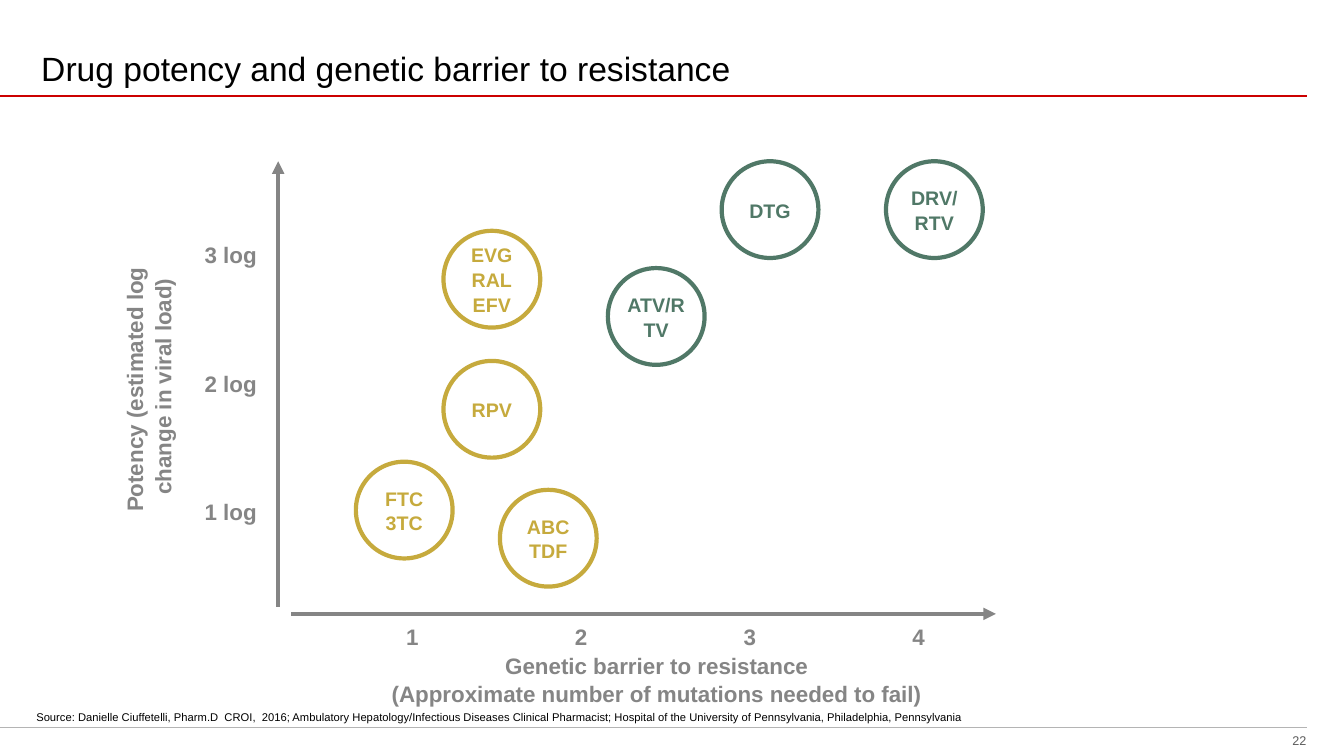
from lxml import etree
from pptx import Presentation
from pptx import util as u
from pptx.dml.color import RGBColor
from pptx.enum import shapes, text
from pptx.oxml.ns import qn

COLORS = {
    "white": "FFFFFF", "black": "000000", "gray": "858585",
    "number": "5C5C5C", "rule": "B4B4B4", "red": "CC0000",
    "gold": "C6AA3D", "green": "507867",
}
LEFT, CENTER, RIGHT = text.PP_ALIGN.LEFT, text.PP_ALIGN.CENTER, text.PP_ALIGN.RIGHT
TOP, MIDDLE, BOTTOM = text.MSO_ANCHOR.TOP, text.MSO_ANCHOR.MIDDLE, text.MSO_ANCHOR.BOTTOM
DRUG_SIZE = 69.1
DRUGS = [
    ("FTC\n3TC", "gold", 254.2, 329.8),
    ("ABC\nTDF", "gold", 357.1, 349.9),
    ("RPV", "gold", 316.8, 257.8),
    ("EVG\nRAL\nEFV", "gold", 316.8, 164.9),
    ("ATV/R\nTV", "green", 434.2, 191.5),
    ("DTG", "green", 515.5, 115.2),
    ("DRV/\nRTV", "green", 632.9, 115.2),
]


class SlideBuilder:
    font = "Arial"

    def __init__(self, page):
        self.page = page

    def color(self, name):
        return RGBColor.from_string(COLORS[name])

    def set_words(self, shape, words, size, color, bold=False, align=LEFT,
                  anchor=TOP, insets=(0, 0, 0, 0), wrap=True, spacing=1.0):
        frame = shape.text_frame
        frame.word_wrap = wrap
        frame.vertical_anchor = anchor
        (frame.margin_left, frame.margin_top,
         frame.margin_right, frame.margin_bottom) = map(u.Pt, insets)
        para = frame.paragraphs[0]
        para.text = words
        para.alignment = align
        para.line_spacing = spacing
        for span in para.runs:
            span.font.name = self.font
            span.font.size = u.Pt(size)
            span.font.bold = bold
            span.font.color.rgb = self.color(color)
        for line_break in para._p.findall(qn("a:br")):
            etree.SubElement(line_break, qn("a:rPr"), sz=str(size * 100))

    def label(self, words, left, top, width, height, size, color, **style):
        box = self.page.shapes.add_textbox(*map(u.Pt, (left, top, width, height)))
        self.set_words(box, words, size, color, **style)
        return box

    def axis_label(self, words, left, top, width, height, **style):
        return self.label(words, left, top, width, height, 16, "gray", bold=True,
                          insets=(2.9, 2.9, 2.9, 2.9), spacing=1.05, **style)

    def line(self, start, end, color, weight, arrow=False):
        connector = self.page.shapes.add_connector(
            shapes.MSO_CONNECTOR.STRAIGHT, *map(u.Pt, start + end))
        connector.line.color.rgb = self.color(color)
        connector.line.width = u.Pt(weight)
        properties = connector._element.spPr
        if arrow:
            etree.SubElement(properties.find(qn("a:ln")), qn("a:tailEnd"),
                             type="triangle")
        etree.SubElement(properties, qn("a:effectLst"))

    def drug(self, words, color, left, top):
        circle = self.page.shapes.add_shape(
            shapes.MSO_SHAPE.OVAL, *map(u.Pt, (left, top, DRUG_SIZE, DRUG_SIZE)))
        circle.shadow.inherit = False
        circle.fill.solid()
        circle.fill.fore_color.rgb = self.color("white")
        circle.line.color.rgb = self.color(color)
        circle.line.width = u.Pt(3)
        self.set_words(circle, words, 14, color, bold=True, align=CENTER,
                       anchor=MIDDLE, spacing=1.05)


def main():
    deck = Presentation()
    deck.slide_width, deck.slide_height = u.Pt(960), u.Pt(540)
    slide = SlideBuilder(deck.slides.add_slide(deck.slide_layouts[6]))

    slide.label("22", 922.3, 523.4, 10.8, 10.8, 9, "number",
                align=RIGHT, anchor=MIDDLE, wrap=False)
    slide.line((0, 519.8), (933.8, 519.8), "rule", 0.75)
    slide.line((0, 68.6), (933.8, 68.6), "red", 1.5)
    slide.label("Drug potency and genetic barrier to resistance",
                26.6, 0, 907.2, 69.1, 24, "black",
                anchor=BOTTOM, insets=(2.9, 2.9, 2.9, 5.8))

    slide.line((208.1, 438.5), (711.4, 438.5), "gray", 3, arrow=True)
    slide.line((198.7, 433.4), (198.7, 115.2), "gray", 3, arrow=True)
    potency = slide.axis_label("Potency (estimated log \nchange in viral load)",
                               -123.1, 256.3, 450.7, 39.6, align=CENTER)
    potency.rotation = 270
    slide.axis_label(
        "Genetic barrier to resistance\n(Approximate number of mutations needed to fail)",
        218.2, 462.2, 501.8, 36, align=CENTER)
    for step in range(4):
        slide.axis_label(str(step + 1), 287.3 + 120.5 * step, 441.4, 14.4, 25.2,
                         wrap=False)
    for step in range(3):
        slide.axis_label(f"{step + 1} log", 143.3, 352.1 - 91.8 * step, 43.2, 25.2,
                         wrap=False)

    for drug in DRUGS:
        slide.drug(*drug)

    slide.label("Source: Danielle Ciuffetelli, Pharm.D  CROI,  2016; "
                "Ambulatory Hepatology/Infectious Diseases Clinical Pharmacist; "
                "Hospital of the University of Pennsylvania, Philadelphia, Pennsylvania",
                25.9, 507.6, 907.9, 9.4, 8, "black", anchor=BOTTOM)
    deck.save("out.pptx")


if __name__ == "__main__":
    main()
